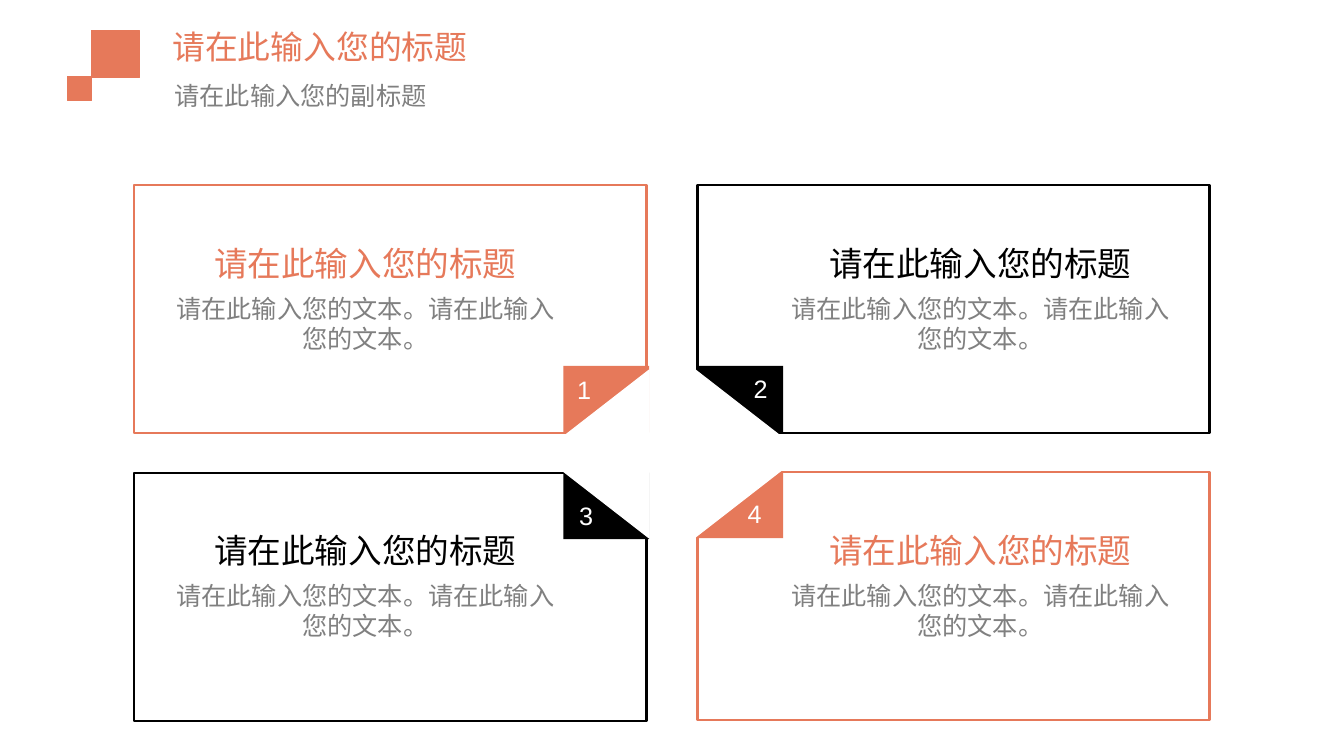
import pptx
import pptx.util
import pptx.dml.color
import pptx.enum.shapes
import pptx.enum.text

Pt = pptx.util.Pt
RECTANGLE = pptx.enum.shapes.MSO_SHAPE.RECTANGLE
ALIGN = pptx.enum.text.PP_ALIGN
ANCHOR = pptx.enum.text.MSO_ANCHOR
CORAL, BLACK, GREY, WHITE = "E6795A", "000000", "808080", "FFFFFF"


def paint(shape, fill=None, line=None, weight=0.75):
    shape.shadow.inherit = False
    for part, colour in ((shape.fill, fill), (shape.line.fill, line)):
        if colour:
            part.solid()
            part.fore_color.rgb = pptx.dml.color.RGBColor.from_string(colour)
        else:
            part.background()
    if line:
        shape.line.width = Pt(weight)


def write(box, text, place=None, size=18, colour=GREY, align=ALIGN.CENTER,
          anchor=ANCHOR.TOP, spacing=1.0):
    if place:
        box.left, box.top, box.width, box.height = map(Pt, place)
    frame = box.text_frame
    frame.word_wrap = True
    frame.auto_size = pptx.enum.text.MSO_AUTO_SIZE.NONE
    frame.vertical_anchor = anchor
    frame.text = text
    paragraph = frame.paragraphs[0]
    paragraph.alignment = align
    paragraph.line_spacing = spacing
    paragraph.space_before = Pt(0)
    font = paragraph.runs[0].font
    font.name, font.size = "Arial", Pt(size)
    font.color.rgb = pptx.dml.color.RGBColor.from_string(colour)


deck = pptx.Presentation()
deck.slide_width, deck.slide_height = Pt(960), Pt(540)
slide = deck.slides.add_slide(deck.slide_layouts[0])
shapes = slide.shapes

# Corner squares
for left, top, side in ((65.5, 21.6, 34), (48.2, 54.7, 17.3)):
    square = shapes.add_shape(RECTANGLE, Pt(left), Pt(top), Pt(side), Pt(side))
    paint(square, CORAL, CORAL)

# Title and subtitle
write(shapes.title, "请在此输入您的标题", place=(116, 10, 688, 46), size=23.4,
      colour=CORAL, align=ALIGN.LEFT, anchor=ANCHOR.MIDDLE)
write(slide.placeholders[1], "请在此输入您的副标题", place=(117.4, 56.2, 687, 39),
      align=ALIGN.LEFT, spacing=0.9)

# Four cards, each with its inner corner folded
CARD_W, CARD_H = 365.8, 177.1
FOLD_W, FOLD_H = 61.2, 47.5
cards = (  # number, colour, column, row, card top, number position
    ("1", CORAL, 0, 0, 132.5, (398.9, 261.4)),
    ("2", BLACK, 1, 0, 132.5, (524.9, 260.6)),
    ("3", BLACK, 0, 1, 337.7, (400.3, 351.4)),
    ("4", CORAL, 1, 1, 337, (520.6, 349.9)),
)
for number, colour, column, row, top, number_at in cards:
    left = (96, 498.2)[column]
    outline = shapes.add_shape(RECTANGLE, Pt(left), Pt(top), Pt(CARD_W), Pt(CARD_H))
    paint(outline, line=colour, weight=1.5)

    # Fold
    fold_left = (402.5, 498.2)[column]
    fold_top = top if row else 261.4
    fold = shapes.add_shape(RECTANGLE, Pt(fold_left), Pt(fold_top), Pt(FOLD_W), Pt(FOLD_H))
    paint(fold, colour)

    # White triangle that cuts the inner corner off
    cut_left = fold_left - 1.4 * column
    cut_top = fold_top + (2.9, -0.9)[row]
    inner_x = cut_left + FOLD_W * (1 - column)
    outer_x = cut_left + FOLD_W * column
    inner_y = cut_top + FOLD_H * (1 - row)
    outer_y = cut_top + FOLD_H * row
    pen = shapes.build_freeform(Pt(inner_x), Pt(inner_y))
    pen.add_line_segments([(Pt(outer_x), Pt(inner_y)), (Pt(inner_x), Pt(outer_y))])
    paint(pen.convert_to_shape(), WHITE, WHITE)

    # Number, heading and text
    text_left = 118.1 + 439.2 * column
    heading_top = 144 + 205.2 * row
    for text, place, style in (
        (number, (*number_at, 36.7, 33.8), dict(colour=WHITE, anchor=ANCHOR.MIDDLE)),
        ("请在此输入您的标题", (text_left, heading_top, 285.8, 61.9),
         dict(size=24, colour=colour, anchor=ANCHOR.BOTTOM)),
        ("请在此输入您的文本。请在此输入您的文本。",
         (text_left, heading_top + 61.9, 285.8, 103.7), {}),
    ):
        write(shapes.add_textbox(0, 0, 0, 0), text, place=place, **style)

deck.save("out.pptx")
